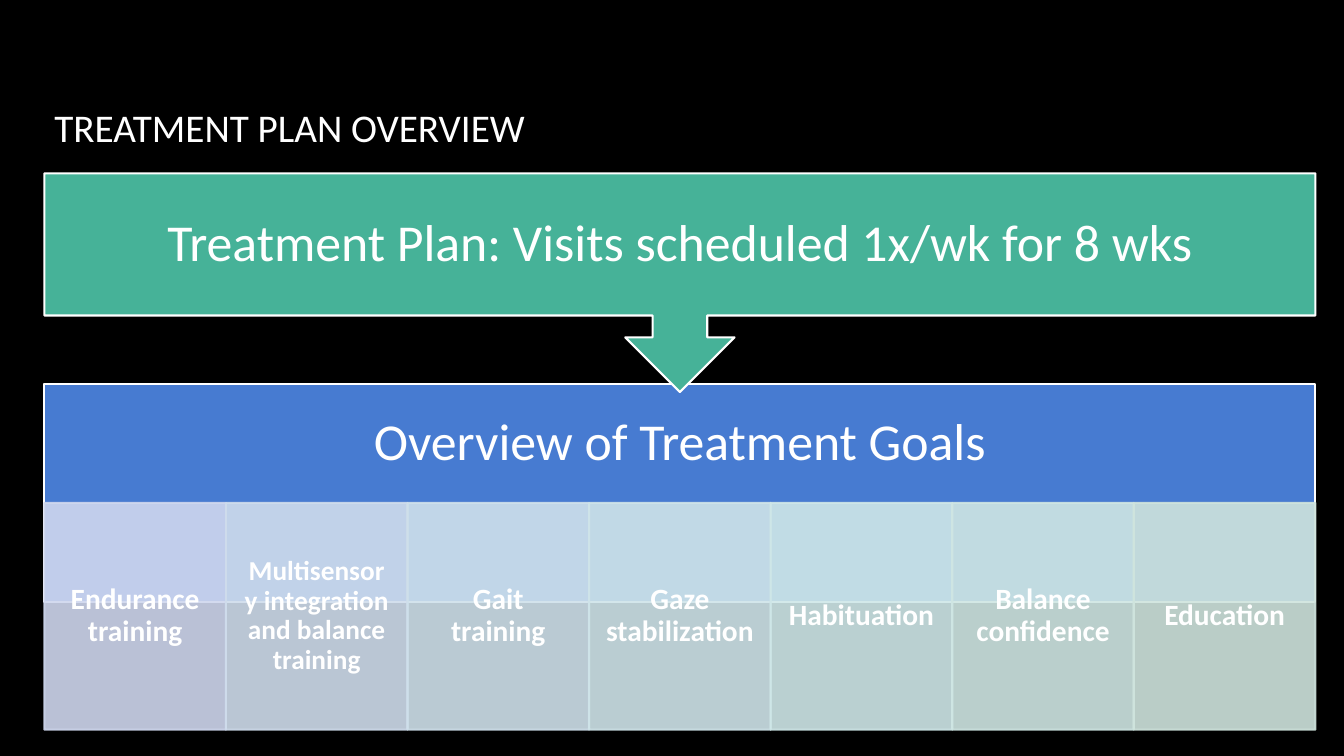
import pptx
import pptx.dml.color
import pptx.enum.shapes
import pptx.enum.text
import pptx.oxml.ns
import pptx.util
from dataclasses import dataclass
from lxml import etree

Pt = pptx.util.Pt
SHAPE = pptx.enum.shapes.MSO_SHAPE
ALIGN = pptx.enum.text.PP_ALIGN


@dataclass(frozen=True)
class Theme:
    font: str = "Calibri"
    back: str = "000000"
    text: str = "FFFFFF"
    plan: str = "46B298"
    goals: str = "477BD1"
    title_size: float = 28
    band_size: float = 37
    goal_size: float = 21
    long_goal_size: float = 19.5
    line: float = 1.5


THEME = Theme()
LEFT, WIDTH = 31.7, 907.9
PLAN_TOP, GOALS_TOP, TILES_TOP = 123.8, 274.5, 359.2
BAND_INSETS = (21, 21)
TILE_INSETS = (11.6, 2)
GOALS = [
    ("Endurance training", "CFD7EE", THEME.goal_size),
    ("Multisensory integration and balance training", "CFDCEC", THEME.long_goal_size),
    ("Gait training", "CFE0EB", THEME.goal_size),
    ("Gaze stabilization", "CFE4E9", THEME.goal_size),
    ("Habituation", "CFE7E8", THEME.goal_size),
    ("Balance confidence", "CFE6E3", THEME.goal_size),
    ("Education", "CFE4DD", THEME.goal_size),
]


def rgb(color):
    return pptx.dml.color.RGBColor.from_string(color)


def set_alpha(fill, percent):
    color = fill._xPr.find(".//" + pptx.oxml.ns.qn("a:srgbClr"))
    alpha = etree.SubElement(color, pptx.oxml.ns.qn("a:alpha"))
    alpha.set("val", str(percent * 1000))


def add_block(s, kind, box, fill, line, alpha=None):
    sp = s.shapes.add_shape(kind, *map(Pt, box))
    sp.shadow.inherit = False
    sp.line.width = Pt(THEME.line)
    for paint, color in ((sp.fill, fill), (sp.line.fill, line)):
        paint.solid()
        paint.fore_color.rgb = rgb(color)
        if alpha:
            set_alpha(paint, alpha)
    return sp


def write(sp, text, size, bold=False, align=ALIGN.CENTER, insets=(7.2, 3.6)):
    tf = sp.text_frame
    tf.word_wrap = True
    tf.vertical_anchor = pptx.enum.text.MSO_ANCHOR.MIDDLE
    tf.margin_left = tf.margin_right = Pt(insets[0])
    tf.margin_top = tf.margin_bottom = Pt(insets[1])
    p = tf.paragraphs[0]
    p.alignment = align
    p.line_spacing = 0.9
    r = p.add_run()
    r.text = text
    r.font.name = THEME.font
    r.font.size = Pt(size)
    r.font.bold = bold
    r.font.color.rgb = rgb(THEME.text)


def add_text(s, box, text, size, **fmt):
    write(s.shapes.add_textbox(*map(Pt, box)), text, size, **fmt)


def add_goals(s):
    add_block(s, SHAPE.RECTANGLE, (LEFT, GOALS_TOP, WIDTH, 155.5), THEME.goals, THEME.text)
    add_text(s, (LEFT, GOALS_TOP, WIDTH, 84.2), "Overview of Treatment Goals",
             THEME.band_size, insets=BAND_INSETS)
    step = WIDTH / len(GOALS)
    for i, (goal, color, size) in enumerate(GOALS):
        box = (LEFT + i * step, TILES_TOP, step, 162)
        sp = add_block(s, SHAPE.RECTANGLE, box, color, color, alpha=90)
        write(sp, goal, size, bold=True, insets=TILE_INSETS)


def add_plan(s):
    sp = add_block(s, SHAPE.UP_ARROW_CALLOUT, (LEFT, PLAN_TOP, WIDTH, 156.2),
                   THEME.plan, THEME.text)
    sp.rotation = 180
    add_text(s, (LEFT, PLAN_TOP, WIDTH, 101.5),
             "Treatment Plan: Visits scheduled 1x/wk for 8 wks",
             THEME.band_size, insets=BAND_INSETS)


def main():
    prs = pptx.Presentation()
    prs.slide_width, prs.slide_height = Pt(960), Pt(540)
    s = prs.slides.add_slide(prs.slide_layouts[6])
    s.background.fill.solid()
    s.background.fill.fore_color.rgb = rgb(THEME.back)
    add_text(s, (LEFT, 35.3, 598.3, 114.5), "TREATMENT PLAN OVERVIEW",
             THEME.title_size, align=ALIGN.LEFT)
    add_goals(s)
    add_plan(s)
    prs.save("out.pptx")


if __name__ == "__main__":
    main()
